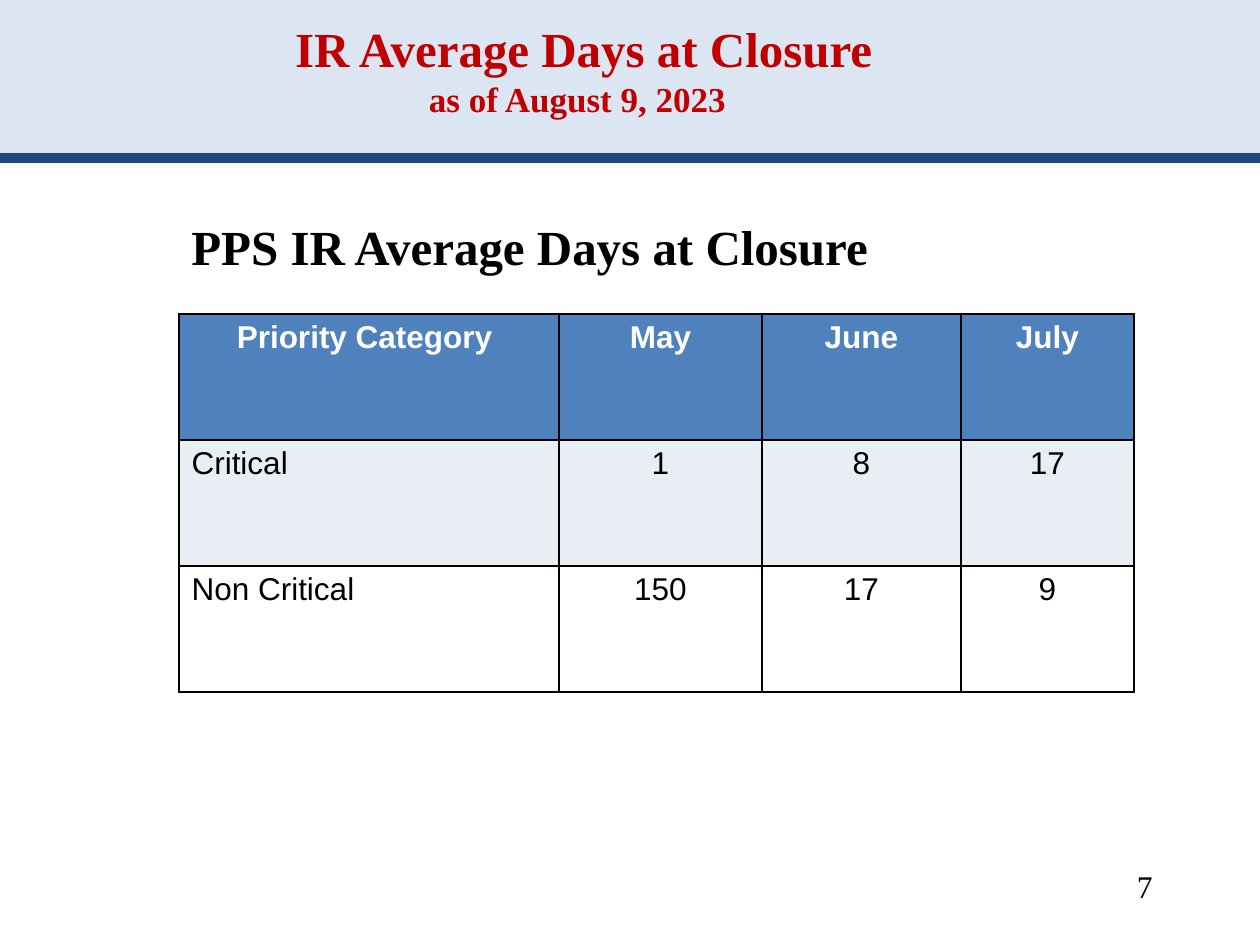
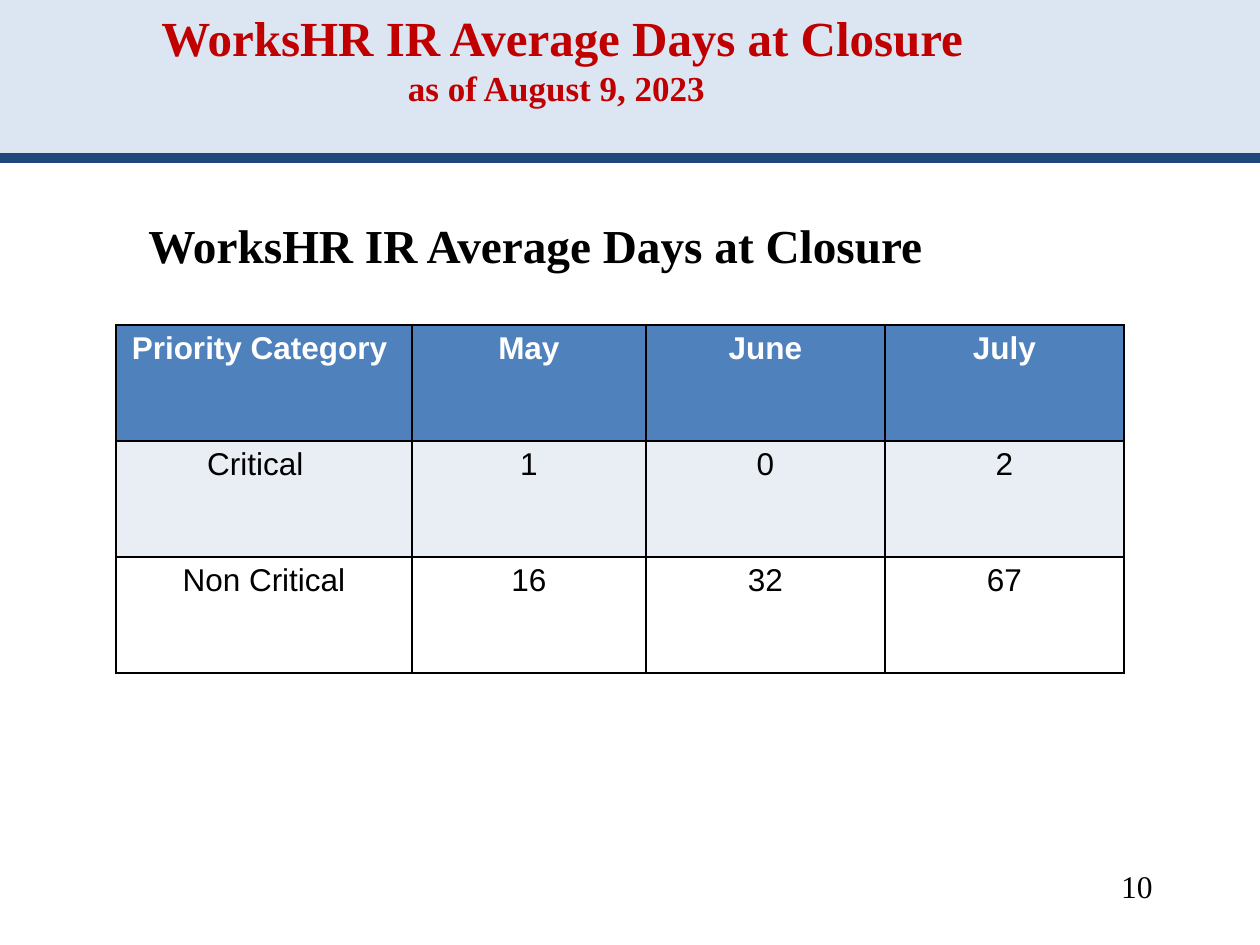
"""Build two slides that report the average days at closure of IRs."""
from lxml import etree
from pptx import Presentation
from pptx.dml.color import RGBColor
from pptx.enum.shapes import MSO_CONNECTOR, MSO_SHAPE
from pptx.enum.text import MSO_ANCHOR, MSO_AUTO_SIZE, PP_ALIGN
from pptx.oxml.ns import qn
from pptx.util import Emu, Pt

RECT = MSO_SHAPE.RECTANGLE
STRAIGHT = MSO_CONNECTOR.STRAIGHT
BOTTOM = MSO_ANCHOR.BOTTOM
TOP = MSO_ANCHOR.TOP
NO_FIT = MSO_AUTO_SIZE.NONE
LEFT, CENTER, RIGHT = PP_ALIGN.LEFT, PP_ALIGN.CENTER, PP_ALIGN.RIGHT

PX_PER_INCH = 126
SLIDE_W, SLIDE_H = 1260, 945
TITLE_ONLY = 5
SERIF, SANS = "Times New Roman", "Arial"
COLORS = {
    "band": "DCE6F2",
    "rule": "1F497D",
    "title": "C00000",
    "text": "000000",
    "head": "4F81BD",
    "head_text": "FFFFFF",
    "odd": "E9EDF4",
    "even": "FFFFFF",
}
DATE = "as of August 9, 2023"
HEADER = ["Priority Category ", "May", "June", "July"]


def px(n):
    """Turn pixels into EMU."""
    return Emu(round(n * 914400 / PX_PER_INCH))


def rgb(name):
    """Look up a named colour."""
    return RGBColor.from_string(COLORS[name])


def add_run(p, text, size, font, color, bold=False):
    """Add one formatted run to a paragraph."""
    r = p.add_run()
    r.text = text
    r.font.size = Pt(size)
    r.font.name = font
    r.font.bold = bold
    r.font.color.rgb = rgb(color)


def add_band(s, layout):
    """Draw the header band and rule, and move them to the shared layout."""
    band = s.shapes.add_shape(RECT, 0, 0, px(SLIDE_W), px(161))
    band.shadow.inherit = False
    band.fill.solid()
    band.fill.fore_color.rgb = rgb("band")
    band.line.fill.background()
    rule = s.shapes.add_connector(STRAIGHT, 0, px(158), px(SLIDE_W), px(158))
    rule.line.color.rgb = rgb("rule")
    rule.line.width = Pt(5.5)
    etree.SubElement(rule.element.spPr, qn("a:effectLst"))
    for i, sp in enumerate((band, rule)):
        layout.shapes.element.insert(2 + i, sp.element)


def add_title(s, text, box):
    """Fill the title placeholder with a title and the report date."""
    sp = s.shapes.title
    sp.left, sp.top, sp.width, sp.height = map(px, box)
    tf = sp.text_frame
    tf.word_wrap = True
    tf.auto_size = NO_FIT
    tf.vertical_anchor = BOTTOM
    p = tf.paragraphs[0]
    p.alignment = CENTER
    add_run(p, text, 28, SERIF, "title", True)
    p.add_line_break()
    add_run(p, DATE, 20, SERIF, "title", True)


def add_text(s, text, box, size, align=LEFT, bold=False):
    """Add a one-line serif text box."""
    tf = s.shapes.add_textbox(*map(px, box)).text_frame
    tf.word_wrap = True
    p = tf.paragraphs[0]
    p.alignment = align
    add_run(p, text, size, SERIF, "text", bold)


def add_borders(cell):
    """Give a cell thin black lines on all sides."""
    tcPr = cell._tc.get_or_add_tcPr()
    for side in ("lnL", "lnR", "lnT", "lnB"):
        ln = etree.SubElement(tcPr, qn(f"a:{side}"), w=str(Pt(1)))
        fill = etree.SubElement(ln, qn("a:solidFill"))
        etree.SubElement(fill, qn("a:srgbClr"), val=COLORS["text"])


def add_days_table(s, left, top, widths, row_h, rows, label_align):
    """Add the table of days per priority category and month."""
    rows = [HEADER] + rows
    frame = s.shapes.add_table(len(rows), len(widths), px(left), px(top),
                               px(sum(widths)), px(row_h * len(rows)))
    table = frame.table
    for col, w in zip(table.columns, widths):
        col.width = px(w)
    for i, row in enumerate(rows):
        table.rows[i].height = px(row_h)
        head = i == 0
        fill = "head" if head else "odd" if i % 2 else "even"
        for j, text in enumerate(row):
            cell = table.cell(i, j)
            add_borders(cell)
            cell.fill.solid()
            cell.fill.fore_color.rgb = rgb(fill)
            cell.vertical_anchor = TOP
            p = cell.text_frame.paragraphs[0]
            p.alignment = label_align if j == 0 and not head else CENTER
            add_run(p, text, 18, SANS, "head_text" if head else "text", head)
    return table


def add_slide(prs, title, title_box, number):
    """Add a slide with its title and page number."""
    s = prs.slides.add_slide(prs.slide_layouts[TITLE_ONLY])
    add_title(s, title, title_box)
    add_text(s, number, (903, 861, 262, 63), 18, RIGHT)
    return s


def main():
    """Build and save the slides."""
    prs = Presentation()
    prs.slide_width, prs.slide_height = px(SLIDE_W), px(SLIDE_H)

    s = add_slide(prs, " IR Average Days at Closure", (21, 38, 1113, 88), "7")
    add_band(s, prs.slide_layouts[TITLE_ONLY])
    add_text(s, "PPS IR Average Days at Closure", (179, 210, 987, 72), 28,
             bold=True)
    add_days_table(s, 179, 314, [380, 203, 199, 173], 126,
                   [["Critical", "1", "8", "17"],
                    ["Non Critical", "150", "17", "9"]], LEFT)

    s = add_slide(prs, " WorksHR IR Average Days at Closure",
                  (21, 42, 1071, 73), "10")
    add_text(s, "WorksHR IR Average Days at Closure", (136, 210, 1061, 71), 27,
             bold=True)
    table = add_days_table(s, 116, 325, [296, 234, 239, 239], 116,
                           [["Critical", "1", "0", "2"],
                            ["Non Critical", "16", "32", "67"]], CENTER)
    table.cell(1, 0).margin_right = px(30)

    prs.save("out.pptx")


if __name__ == "__main__":
    main()
